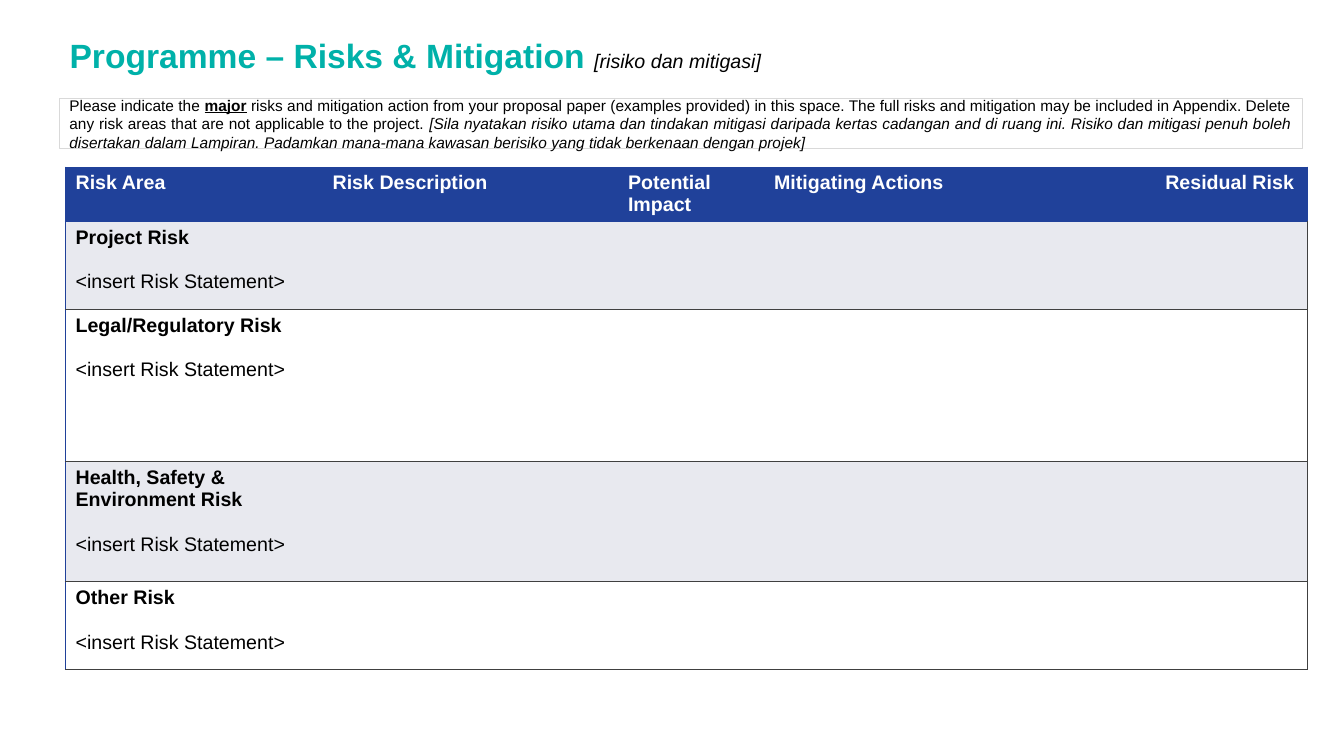
"""Build the programme risks and mitigation slide."""
from lxml.etree import SubElement as Sub
from pptx import Presentation
from pptx.dml.color import RGBColor as Rgb
from pptx.enum.shapes import MSO_SHAPE as Kind
from pptx.enum.text import MSO_ANCHOR as Anchor, PP_ALIGN as Align
from pptx.oxml.ns import qn
from pptx.util import Pt

HUES = {"teal": "00B1A9", "blue": "20419A", "pale": "E8E9EF",
        "white": "FFFFFF", "black": "000000", "grey": "D9D9D9", "dark": "404040"}
TITLE = [("Programme – Risks & Mitigation ", {"size": Pt(24), "bold": True}, "teal"),
         ("[risiko dan mitigasi]", {"size": Pt(14), "bold": False, "italic": True}, "black")]
NOTE = [("Please indicate the ", {}),
        ("major", {"bold": True, "underline": True}),
        (" risks and mitigation action from your proposal paper (examples provided) in this "
         "space. The full risks and mitigation may be included in Appendix. Delete any risk "
         "areas that are not applicable to the project. ", {}),
        ("[Sila nyatakan risiko utama dan tindakan mitigasi daripada kertas cadangan and di "
         "ruang ini. Risiko dan mitigasi penuh boleh disertakan dalam Lampiran. Padamkan "
         "mana-mana kawasan berisiko yang tidak berkenaan dengan projek]", {"italic": True})]
HEADS = [("Risk Area", 183.6), ("Risk Description", 211), ("Potential Impact", 104.4),
         ("Mitigating Actions", 279.4), ("Residual Risk", 108.7)]
RISKS = [("Project Risk", 62.8), ("Legal/Regulatory Risk", 108.7),
         ("Health, Safety & Environment Risk", 85.8), ("Other Risk", 62.8)]
PROMPT = "<insert Risk Statement>"
HEAD_H = 39.4
PLAIN = "{2D5ABB26-0587-4C30-8999-92F81FD0307C}"


def rgb(hue):
    return Rgb.from_string(HUES[hue])


def write(para, text, form, hue):
    run = para.add_run()
    run.text = text
    for key, val in {"name": "Arial", **form}.items():
        setattr(run.font, key, val)
    run.font.color.rgb = rgb(hue)


def edge(cell, side, hue, width):
    props = cell._tc.get_or_add_tcPr()
    line = Sub(props, qn("a:ln" + side), w=str(Pt(width)))
    Sub(Sub(line, qn("a:solidFill")), qn("a:srgbClr"), val=HUES[hue])


def paint(cell, hue, row, col):
    if col == 0:
        edge(cell, "L", "blue", 1)
    if col == len(HEADS) - 1:
        edge(cell, "R", "dark" if row else "blue", 0.75)
    edge(cell, "B", "dark" if row else "blue", 0.75)
    cell.fill.solid()
    cell.fill.fore_color.rgb = rgb(hue)


def add_title(slide):
    title = slide.shapes.title
    for key, val in {"left": 42.5, "top": 10, "width": 688.3, "height": 59}.items():
        setattr(title, key, Pt(val))
    title.text_frame.vertical_anchor = Anchor.MIDDLE
    para = title.text_frame.paragraphs[0]
    para.alignment = Align.LEFT
    for text, form, hue in TITLE:
        write(para, text, form, hue)


def add_note(slide):
    box = slide.shapes.add_shape(Kind.RECTANGLE, Pt(42.5), Pt(70.5), Pt(887.8), Pt(35.5))
    box.shadow.inherit = False
    box.fill.background()
    box.line.color.rgb = rgb("grey")
    box.line.width = Pt(0.75)
    frame = box.text_frame
    frame.word_wrap = True
    frame.vertical_anchor = Anchor.MIDDLE
    para = frame.paragraphs[0]
    para.alignment = Align.JUSTIFY
    for text, form in NOTE:
        write(para, text, {"size": Pt(11), **form}, "black")


def add_grid(slide):
    highs = [HEAD_H] + [high for _, high in RISKS]
    wides = [wide for _, wide in HEADS]
    grid = slide.shapes.add_table(len(highs), len(wides), Pt(46.8), Pt(119),
                                  Pt(sum(wides)), Pt(sum(highs))).table
    grid._tbl.tblPr.find(qn("a:tableStyleId")).text = PLAIN
    for col, wide in zip(grid.columns, wides):
        col.width = Pt(wide)
    for row, high in zip(grid.rows, highs):
        row.height = Pt(high)
    for row in range(len(highs)):
        hue = "blue" if row == 0 else "pale" if row % 2 else "white"
        for col in range(len(wides)):
            paint(grid.cell(row, col), hue, row, col)
    bold = {"size": Pt(14), "bold": True}
    for col, (head, _) in enumerate(HEADS):
        write(grid.cell(0, col).text_frame.paragraphs[0], head, bold, "white")
    for row, (risk, _) in enumerate(RISKS, 1):
        frame = grid.cell(row, 0).text_frame
        write(frame.paragraphs[0], risk, bold, "black")
        para = frame.add_paragraph()
        para.space_before = Pt(16)
        write(para, PROMPT, {"size": Pt(14), "bold": False}, "black")


def main():
    deck = Presentation()
    deck.slide_width, deck.slide_height = Pt(960), Pt(540)
    slide = deck.slides.add_slide(deck.slide_layouts[5])
    add_note(slide)
    add_title(slide)
    add_grid(slide)
    deck.save("out.pptx")


if __name__ == "__main__":
    main()
